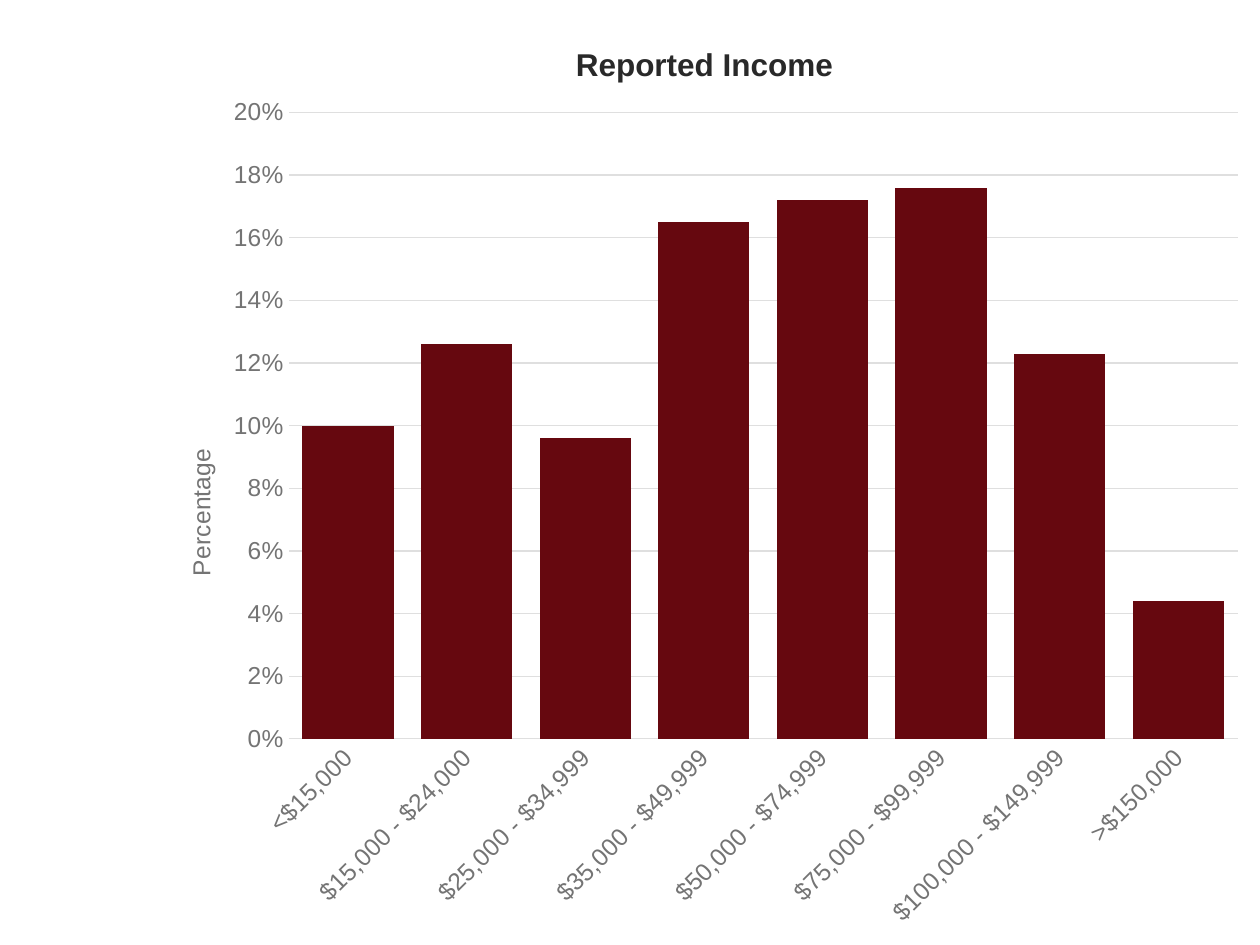
from lxml import etree
from pptx import Presentation
from pptx import util as u
from pptx.chart.data import CategoryChartData
from pptx.dml.color import RGBColor
from pptx.enum import chart as c
from pptx.oxml import ns

FONT = "Arial"
GREY, RULE, DARK, MAROON = "747474", "DFDFDF", "292929", "66080F"


def style(font, size, color, bold=False):
    font.name, font.size, font.bold = FONT, u.Pt(size), bold
    font.color.rgb = RGBColor.from_string(color)


def place(element, position, **shares):
    """Give a chart part a manual layout, in shares of the chart's size."""
    for old in element.findall(ns.qn("c:layout")):
        element.remove(old)
    layout = etree.Element(ns.qn("c:layout"))
    manual = etree.SubElement(layout, ns.qn("c:manualLayout"))
    if "w" in shares:
        etree.SubElement(manual, ns.qn("c:layoutTarget")).set("val", "inner")
    for key in ("x", "y"):
        etree.SubElement(manual, ns.qn(f"c:{key}Mode")).set("val", "edge")
    for key, share in shares.items():
        etree.SubElement(manual, ns.qn(f"c:{key}")).set("val", str(share))
    element.insert(position, layout)


presentation = Presentation()
presentation.slide_width, presentation.slide_height = u.Inches(10), u.Inches(7.5)
slide = presentation.slides.add_slide(presentation.slide_layouts[6])

# Income shares
incomes = {
    "<$15,000": 0.1,
    "$15,000 - $24,000": 0.126,
    "$25,000 - $34,999": 0.096,
    "$35,000 - $49,999": 0.165,
    "$50,000 - $74,999": 0.172,
    "$75,000 - $99,999": 0.176,
    "$100,000 - $149,999": 0.123,
    ">$150,000": 0.044,
}
data = CategoryChartData(number_format="0%")
data.categories = list(incomes)
data.add_series("Series 1", list(incomes.values()))

# Chart, filling the slide to its right edge
left = u.Inches(1.17)
chart = slide.shapes.add_chart(
    c.XL_CHART_TYPE.COLUMN_CLUSTERED, left, 0,
    presentation.slide_width - left, presentation.slide_height, data).chart
style(chart.font, 10, DARK)
chart.has_legend = False

# Columns
plot = chart.plots[0]
plot.gap_width, plot.overlap, plot.vary_by_categories = 30, -27, False
columns = plot.series[0].format
columns.fill.solid()
columns.fill.fore_color.rgb = RGBColor.from_string(MAROON)
columns.line.fill.background()

# Axes
category_axis, value_axis = chart.category_axis, chart.value_axis
for axis in (category_axis, value_axis):
    axis.major_tick_mark = axis.minor_tick_mark = c.XL_TICK_MARK.NONE
    style(axis.tick_labels.font, 14, GREY)
value_axis.minimum_scale, value_axis.maximum_scale = 0, 0.2
value_axis.major_unit = 0.02
value_axis.tick_labels.number_format = "0%"
value_axis.tick_labels.number_format_is_linked = False
value_axis.format.line.fill.background()
value_axis.has_major_gridlines = True
for line in (category_axis.format.line, value_axis.major_gridlines.format.line):
    line.width = u.Pt(0.75)
    line.color.rgb = RGBColor.from_string(RULE)

# Slanted category labels
body = category_axis._element.find(ns.qn("c:txPr")).find(ns.qn("a:bodyPr"))
body.set("rot", str(-45 * 60000))
body.set("vert", "horz")

# Titles
chart.has_title = value_axis.has_title = True
for title, words, size, color, bold in (
        (chart.chart_title, "Reported Income", 18, DARK, True),
        (value_axis.axis_title, "Percentage", 14, GREY, False)):
    run = title.text_frame.paragraphs[0].add_run()
    run.text = words
    style(run.font, size, color, bold)
body = value_axis.axis_title.text_frame._txBody.find(ns.qn("a:bodyPr"))
body.set("rot", str(-90 * 60000))
body.set("vert", "horz")

# Positions inside the chart
place(chart.chart_title._element, 1, x=0.38, y=0.04)
place(value_axis.axis_title._element, 1, x=0.03, y=0.47)
plot_area = chart._chartSpace.find(ns.qn("c:chart")).find(ns.qn("c:plotArea"))
place(plot_area, 0, x=0.127, y=0.119, w=0.853, h=0.663)

presentation.save("out.pptx")
